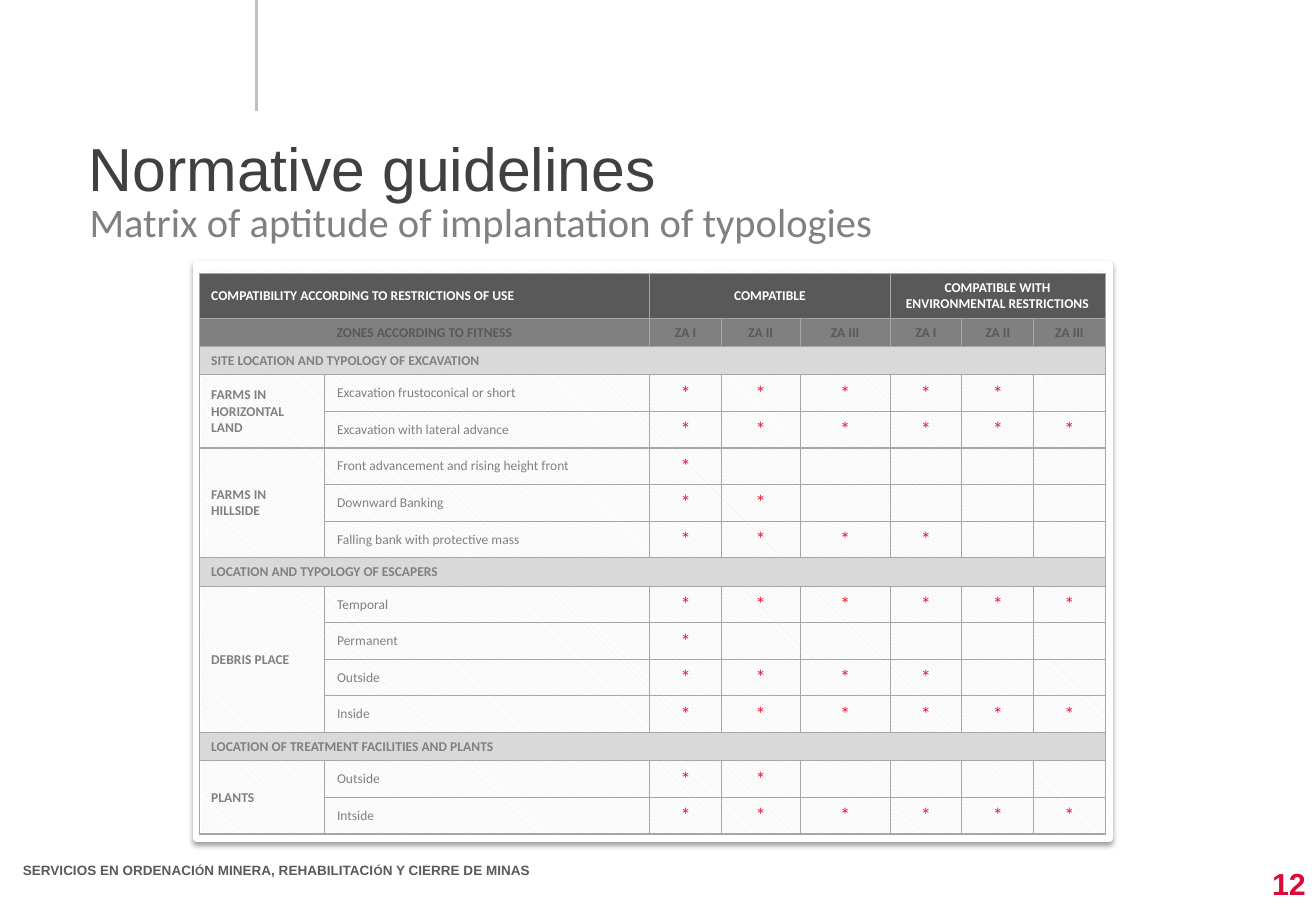
import pptx
import pptx.dml.color
import pptx.enum.dml
import pptx.enum.shapes
import pptx.enum.text
import pptx.oxml.ns
import pptx.util
from lxml import etree

Pt = pptx.util.Pt
qn = pptx.oxml.ns.qn
ALIGN = pptx.enum.text.PP_ALIGN
MIDDLE = pptx.enum.text.MSO_ANCHOR.MIDDLE

COLORS = {
    "white": "FFFFFF", "hatch": "E2E2E2", "band": "D9D9D9", "rule": "BFBFBF",
    "border": "A6A6A6", "grey": "808080", "dark": "595959", "title": "404040",
    "mark": "EC1C3F", "number": "DD0939", "shadow": "000000",
}

ZONES = ["ZA I", "ZA II", "ZA III"]
# Section -> group -> (typology, number of zones marked from the left)
SECTIONS = {
    "SITE LOCATION AND TYPOLOGY OF EXCAVATION": {
        "FARMS IN HORIZONTAL LAND": [
            ("Excavation frustoconical or short", 5),
            ("Excavation with lateral advance", 6)],
        "FARMS IN HILLSIDE": [
            ("Front advancement and rising height front", 1),
            ("Downward Banking", 2),
            ("Falling bank with protective mass", 4)],
    },
    "LOCATION AND TYPOLOGY OF ESCAPERS": {
        "DEBRIS PLACE": [
            ("Temporal", 6), ("Permanent", 1), ("Outside", 4), ("Inside", 6)],
    },
    "LOCATION OF TREATMENT FACILITIES AND PLANTS": {
        "PLANTS": [("Outside", 2), ("Intside", 6)],
    },
}
COLUMN_WIDTHS = [74.6, 192.6, 42.3, 46.8, 53.3, 42.6, 42.6, 42.3]
HEADER_HEIGHT, BAND_HEIGHT, ROW_HEIGHT = 26.6, 16.8, 21.7


def rgb(name):
    return pptx.dml.color.RGBColor.from_string(COLORS[name])


def write(frame, text, font="Calibri", size=8, color="grey", bold=False,
          align=ALIGN.LEFT, spacing=None):
    """Fill the first paragraph; text is a string or a list of (text, size)."""
    para = frame.paragraphs[0]
    para.alignment = align
    if spacing:
        para.line_spacing = spacing
    for words, points in [(text, size)] if isinstance(text, str) else text:
        span = para.add_run()
        span.text = words
        span.font.name = font
        span.font.size = Pt(points)
        span.font.bold = bold
        span.font.color.rgb = rgb(color)


class Page:
    def __init__(self, deck):
        self.shapes = deck.slides.add_slide(deck.slide_layouts[6]).shapes

    def text(self, left, top, width, height, text, inset=None, anchor=None, **style):
        box = self.shapes.add_textbox(Pt(left), Pt(top), Pt(width), Pt(height))
        frame = box.text_frame
        frame.word_wrap = True
        if anchor is not None:
            frame.vertical_anchor = anchor
        if inset is not None:
            frame.margin_left = frame.margin_right = Pt(inset)
            frame.margin_top = frame.margin_bottom = Pt(inset)
        write(frame, text, **style)

    def line(self, x1, y1, x2, y2, color, width):
        line = self.shapes.add_connector(
            pptx.enum.shapes.MSO_CONNECTOR.STRAIGHT, Pt(x1), Pt(y1), Pt(x2), Pt(y2))
        line.line.color.rgb = rgb(color)
        line.line.width = Pt(width)
        etree.SubElement(line._element.spPr, qn("a:effectLst"))

    def hatched_panel(self, left, top, width, height):
        panel = self.shapes.add_shape(
            pptx.enum.shapes.MSO_SHAPE.ROUNDED_RECTANGLE,
            Pt(left), Pt(top), Pt(width), Pt(height))
        panel.adjustments[0] = 0
        panel.fill.patterned()
        panel.fill.pattern = pptx.enum.dml.MSO_PATTERN.LIGHT_DOWNWARD_DIAGONAL
        panel.fill.fore_color.rgb = rgb("hatch")
        panel.fill.back_color.rgb = rgb("white")
        panel.line.color.rgb = rgb("white")
        panel.line.width = Pt(4.5)
        panel.shadow.inherit = False
        effects = panel._element.spPr.find(qn("a:effectLst"))
        shadow = etree.SubElement(
            effects, qn("a:outerShdw"), blurRad=str(Pt(3.1)), dist=str(Pt(1.6)),
            dir="5400000", algn="t", rotWithShape="0")
        color = etree.SubElement(shadow, qn("a:srgbClr"), val=COLORS["shadow"])
        etree.SubElement(color, qn("a:alpha"), val="38000")

    def table(self, left, top, widths, heights):
        table = self.shapes.add_table(
            len(heights), len(widths), Pt(left), Pt(top),
            Pt(sum(widths)), Pt(sum(heights))).table
        table.first_row = table.horz_banding = False
        for column, width in zip(table.columns, widths):
            column.width = Pt(width)
        for row, height in zip(table.rows, heights):
            row.height = Pt(height)
        for cell in table.iter_cells():
            self.border(cell)
            cell.fill.background()
        return table

    def border(self, cell):
        properties = cell._tc.get_or_add_tcPr()
        for side in ("lnL", "lnR", "lnT", "lnB"):
            line = etree.SubElement(properties, qn(f"a:{side}"), w=str(Pt(0.75)))
            fill = etree.SubElement(line, qn("a:solidFill"))
            etree.SubElement(fill, qn("a:srgbClr"), val=COLORS["border"])

    def cell(self, table, row, column, text, rows=1, columns=1, fill=None, **style):
        cell = table.cell(row, column)
        if rows * columns > 1:
            cell.merge(table.cell(row + rows - 1, column + columns - 1))
        cell.vertical_anchor = MIDDLE
        if fill:
            cell.fill.solid()
            cell.fill.fore_color.rgb = rgb(fill)
        write(cell.text_frame, text, **style)

    def shrink_empty_cells(self, table):
        """Keep empty cells from stretching their rows."""
        for cell in table.iter_cells():
            if not cell.text:
                para = cell.text_frame.paragraphs[0]
                etree.SubElement(para._p, qn("a:endParaRPr"), sz="800")


def add_matrix(page):
    heights = [HEADER_HEIGHT, BAND_HEIGHT]
    for groups in SECTIONS.values():
        heights += [BAND_HEIGHT] + [ROW_HEIGHT] * sum(map(len, groups.values()))
    table = page.table(118, 162, COLUMN_WIDTHS, heights)

    header = dict(fill="dark", color="white", bold=True)
    page.cell(table, 0, 0, "COMPATIBILITY ACCORDING TO RESTRICTIONS OF USE",
              columns=2, **header)
    page.cell(table, 0, 2, "COMPATIBLE", columns=3, align=ALIGN.CENTER, **header)
    page.cell(table, 0, 5, "COMPATIBLE WITH ENVIRONMENTAL RESTRICTIONS",
              columns=3, align=ALIGN.CENTER, **header)
    zone = dict(fill="grey", color="dark", bold=True, align=ALIGN.CENTER)
    page.cell(table, 1, 0, "ZONES ACCORDING TO FITNESS", columns=2, **zone)
    for column, name in enumerate(ZONES * 2, start=2):
        page.cell(table, 1, column, name, **zone)

    row = 2
    for section, groups in SECTIONS.items():
        page.cell(table, row, 0, section, columns=8, fill="band", bold=True)
        row += 1
        for group, typologies in groups.items():
            page.cell(table, row, 0, group, rows=len(typologies), bold=True)
            for typology, marks in typologies:
                page.cell(table, row, 1, typology)
                for column in range(2, 2 + marks):
                    page.cell(table, row, column, "*", size=12, color="mark",
                              align=ALIGN.CENTER)
                row += 1
    page.shrink_empty_cells(table)


def main():
    deck = pptx.Presentation()
    deck.slide_width, deck.slide_height = Pt(780), Pt(540)
    page = Page(deck)
    page.text(6.5, 508.3, 457, 19.4,
              [("SERVICIOS EN ORDENACI", 8), ("Ó", 7), ("N MINERA, REHABILITACI", 8),
               ("Ó", 7), ("N Y CIERRE DE MINAS", 8)],
              font="Arial", color="dark", bold=True, spacing=0.9)
    page.line(152, 0, 152, 66, "rule", 1.5)
    page.hatched_panel(116.6, 157, 540.7, 340)
    page.text(718.5, 509.8, 62.6, 28, "12", anchor=MIDDLE, font="Arial", size=18,
              color="number", bold=True, align=ALIGN.RIGHT)
    page.text(46, 113, 680, 36, "Matrix of aptitude of implantation of typologies",
              size=24)
    page.text(52.6, 71.3, 680, 55.4, "Normative guidelines", inset=0, anchor=MIDDLE,
              font="Arial", size=36, color="title")
    add_matrix(page)
    deck.save("out.pptx")


if __name__ == "__main__":
    main()
